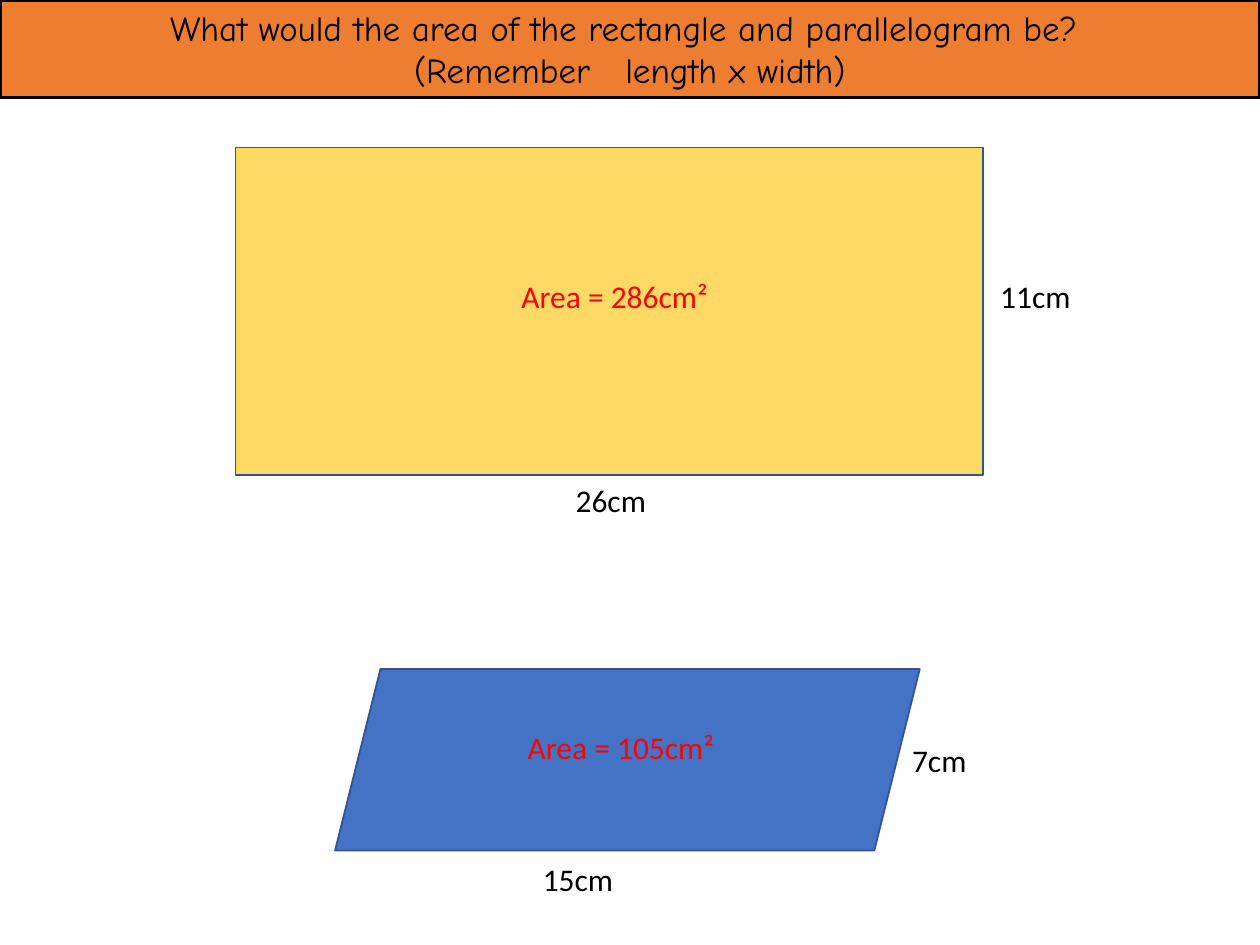
from pptx import Presentation
from pptx.dml.color import RGBColor
from pptx.enum.shapes import MSO_SHAPE
from pptx.enum.text import MSO_ANCHOR, MSO_AUTO_SIZE, PP_ALIGN
from pptx.util import Pt

RECTANGLE, PARALLELOGRAM = MSO_SHAPE.RECTANGLE, MSO_SHAPE.PARALLELOGRAM
LEFT, CENTER = PP_ALIGN.LEFT, PP_ALIGN.CENTER
MIDDLE = MSO_ANCHOR.MIDDLE
FIT_SHAPE = MSO_AUTO_SIZE.SHAPE_TO_FIT_TEXT

THEME = {
    "banner": "ED7D31", "yellow": "FFD966", "blue": "4472C4",
    "outline": "325491", "ink": "000000", "answer": "FF0000",
    "title_font": "Comic Neue", "label_font": "Calibri",
    "title_size": 20, "label_size": 18,
}

WIDE_GAP = 13.4
QUESTION = [
    [("What would the area of the rectangle and parallelogram be? ", 0)],
    [("(Remember", 0), (" ", WIDE_GAP), ("length x width)", 0)],
]
BANNER = (0, 0, 720, 55.76)

FIGURES = [
    {"kind": RECTANGLE, "box": (134.64, 84.24, 426.96, 187.2), "fill": "yellow",
     "labels": [("26cm", 321.84, 271.44, "ink"),
                ("11cm", 564.48, 154.8, "ink"),
                ("Area = 286cm²", 290.88, 154.8, "answer")]},
    {"kind": PARALLELOGRAM, "box": (191.52, 382.32, 334.08, 103.68), "fill": "blue",
     "labels": [("15cm", 303.12, 488.16, "ink"),
                ("7cm", 514.08, 419.76, "ink"),
                ("Area = 105cm²", 294.48, 412.56, "answer")]},
]
LABEL_SIZE = (155.52, 29.08)


def write(shape, lines, font, size, color, align=LEFT):
    frame = shape.text_frame
    frame.word_wrap = True
    frame.auto_size = FIT_SHAPE
    for index, pieces in enumerate(lines):
        paragraph = frame.paragraphs[0] if index == 0 else frame.add_paragraph()
        paragraph.alignment = align
        for words, spacing in pieces:
            run = paragraph.add_run()
            run.text = words
            run.font.name = THEME[font]
            run.font.size = Pt(THEME[size])
            run.font.color.rgb = RGBColor.from_string(THEME[color])
            if spacing:
                run.font._element.set("spc", str(round(spacing * 100)))


def draw(slide, kind, box, fill, outline, weight):
    shape = slide.shapes.add_shape(kind, *map(Pt, box))
    shape.shadow.inherit = False
    shape.fill.solid()
    shape.fill.fore_color.rgb = RGBColor.from_string(THEME[fill])
    shape.line.color.rgb = RGBColor.from_string(THEME[outline])
    shape.line.width = Pt(weight)
    return shape


def main():
    deck = Presentation()
    deck.slide_width, deck.slide_height = Pt(720), Pt(540)
    slide = deck.slides.add_slide(deck.slide_layouts[6])

    banner = draw(slide, RECTANGLE, BANNER, "banner", "ink", 2.25)
    banner.text_frame.vertical_anchor = MIDDLE
    write(banner, QUESTION, "title_font", "title_size", "ink", align=CENTER)

    for figure in FIGURES:
        draw(slide, figure["kind"], figure["box"], figure["fill"], "outline", 1)
        for words, left, top, color in figure["labels"]:
            label = slide.shapes.add_textbox(*map(Pt, (left, top, *LABEL_SIZE)))
            write(label, [[(words, 0)]], "label_font", "label_size", color)

    deck.save("out.pptx")


if __name__ == "__main__":
    main()
